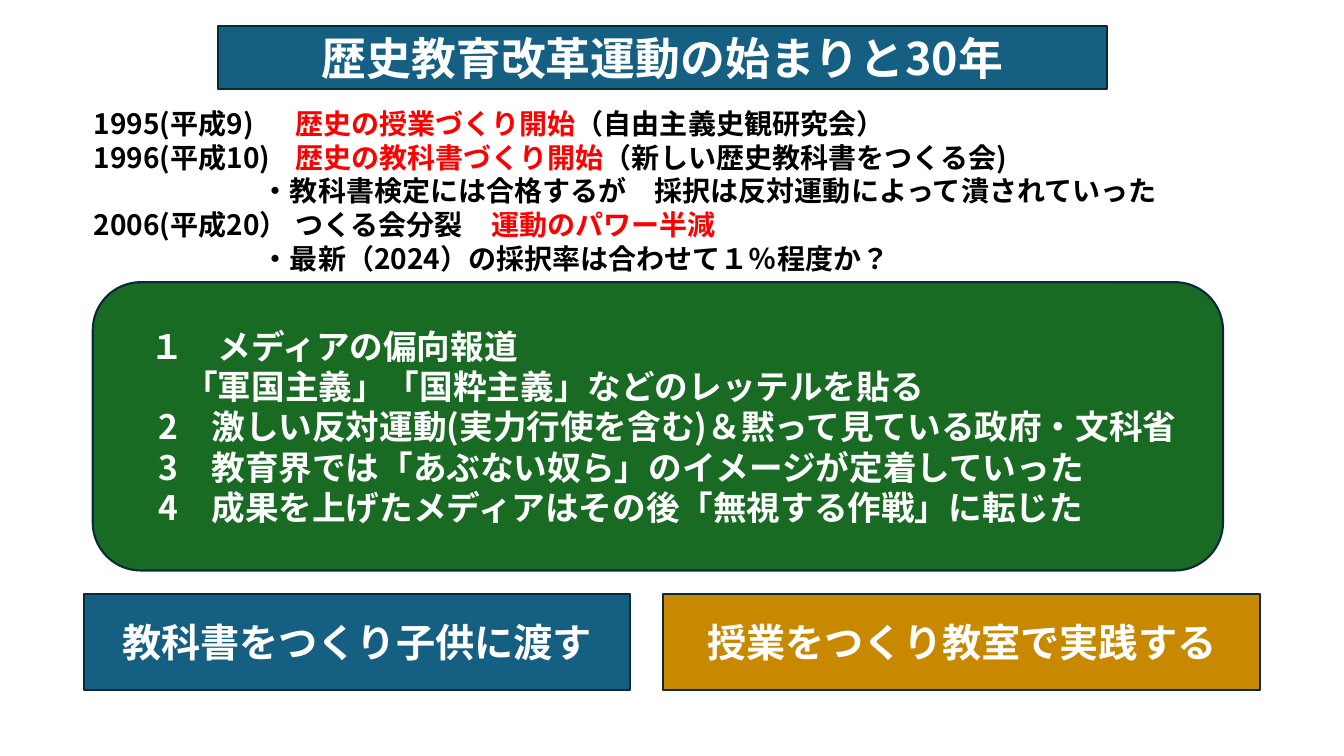
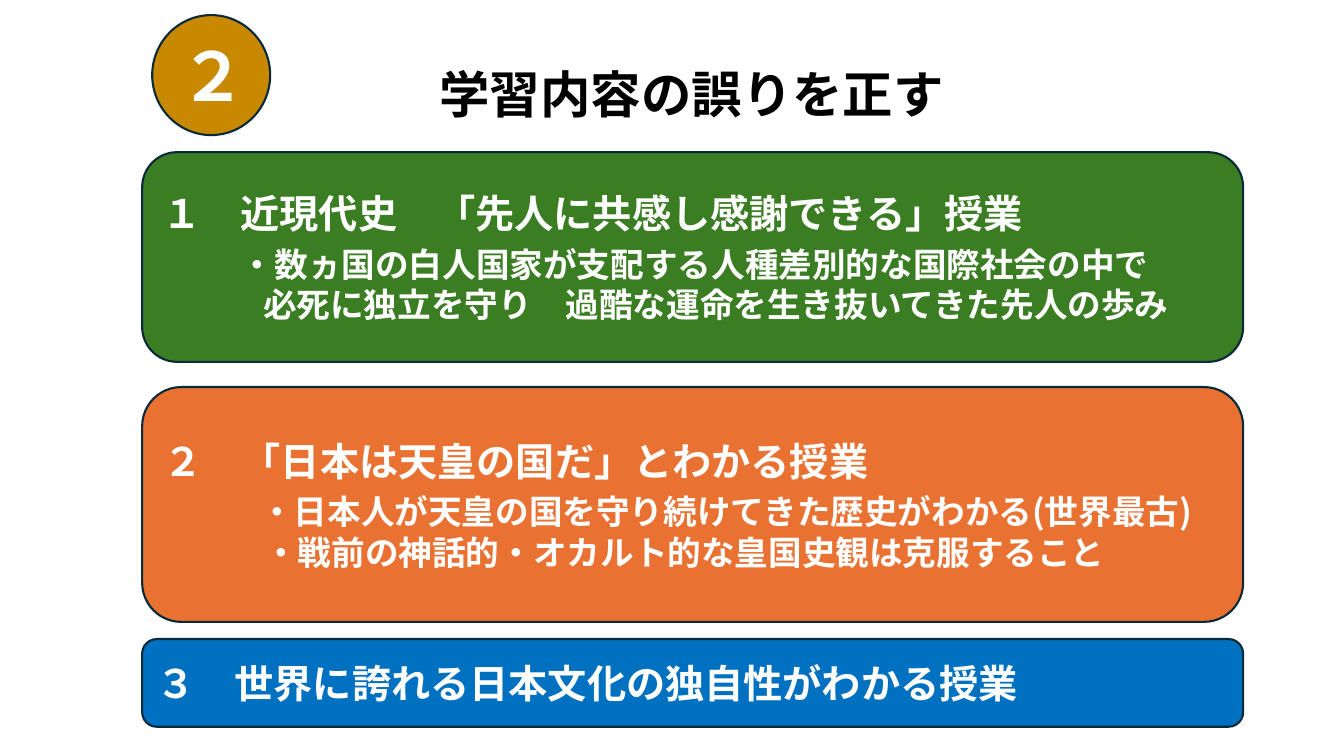
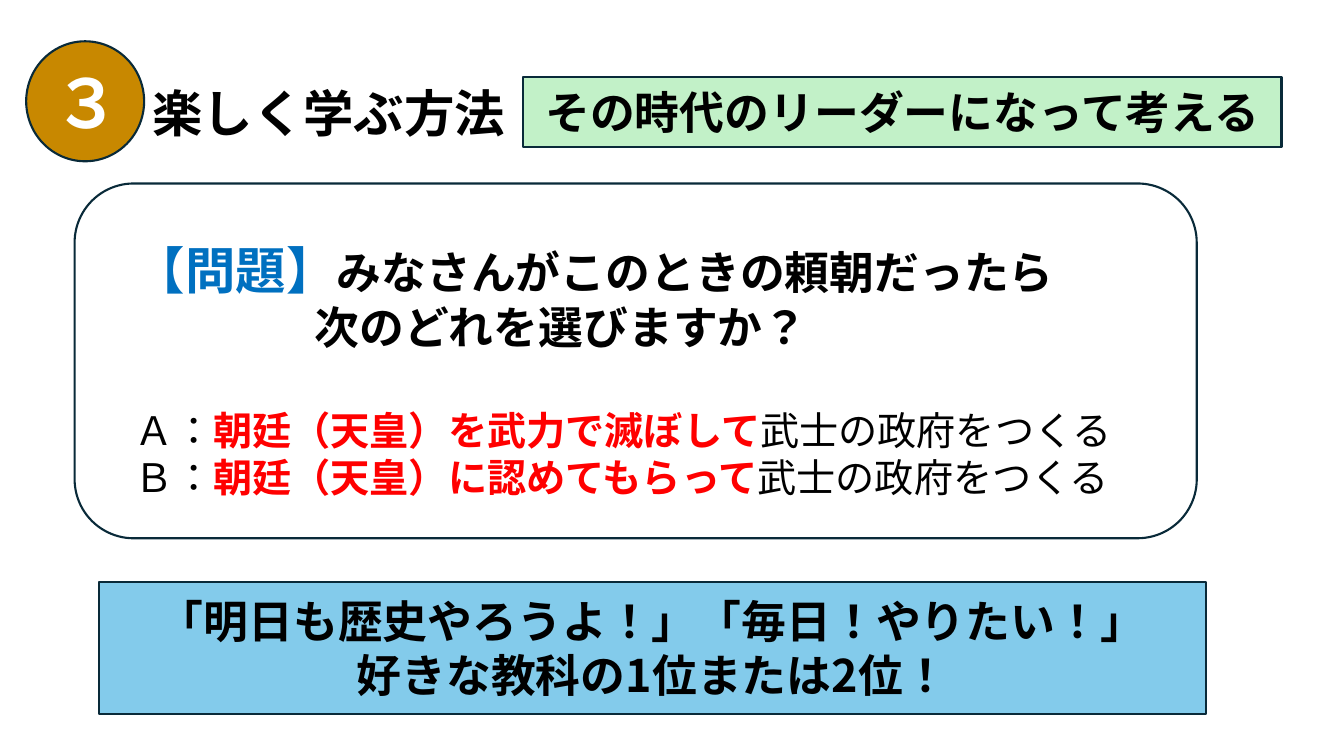
from lxml.etree import SubElement
from pptx import Presentation
from pptx.dml.color import RGBColor
from pptx.enum.lang import MSO_LANGUAGE_ID as Language
from pptx.enum.shapes import MSO_SHAPE as Preset
from pptx.enum.text import MSO_ANCHOR as Anchor, MSO_AUTO_SIZE as AutoSize, PP_ALIGN as Align
from pptx.oxml.ns import qn
from pptx.util import Inches, Pt

FONT = "Noto Sans CJK JP"
BLACK, WHITE, RED = "000000", "FFFFFF", "FF0000"
OUTLINE, TEAL, GOLD, BLUE = "092A39", "156082", "C88800", "0070C0"
LEAF, FOREST, ORANGE = "3B7D23", "196B24", "E97132"
MINT, SKY = "C2F1C8", "83CBEB"
BASE = {"size": 28, "bold": True, "color": WHITE}


def rgb(value):
    """Turn a hex string into a colour."""
    return RGBColor.from_string(value)


def set_all(target, values):
    """Set every attribute named in a dict."""
    for name, value in values.items():
        setattr(target, name, value)


def line(*spans, indent=0, tab=None, before=0):
    """Describe a paragraph; each span is text or a (text, style) pair."""
    pairs = [(span, {}) if isinstance(span, str) else span for span in spans]
    return {"spans": pairs, "indent": indent, "tab": tab, "before": before}


def add_span(para, text, style):
    """Add one formatted run to a paragraph."""
    span = para.add_run()
    span.text = text
    set_all(span.font, {"size": Pt(style["size"]), "bold": style["bold"],
                        "name": FONT, "language_id": Language.JAPANESE})
    span.font.color.rgb = rgb(style["color"])
    SubElement(span.font._element, qn("a:ea"), typeface=FONT)


def write(shape, lines, anchor=Anchor.MIDDLE, align=Align.LEFT, **style):
    """Fill a shape with paragraphs in one base style."""
    frame = shape.text_frame
    set_all(frame, {"word_wrap": True, "auto_size": AutoSize.NONE, "vertical_anchor": anchor})
    for index, item in enumerate(lines):
        para = frame.paragraphs[0] if index == 0 else frame.add_paragraph()
        set_all(para, {"alignment": align, "space_before": Pt(item["before"])})
        props = para._p.get_or_add_pPr()
        props.set("marL", "0")
        props.set("indent", str(Inches(item["indent"])))
        if item["tab"]:
            stops = SubElement(props, qn("a:tabLst"))
            SubElement(stops, qn("a:tab"), pos=str(Inches(item["tab"])), algn="l")
        for text, change in item["spans"]:
            add_span(para, text, {**BASE, **style, **change})


def paint(shape, fill):
    """Give a shape its fill and the shared outline."""
    if fill:
        shape.fill.solid()
        shape.fill.fore_color.rgb = rgb(fill)
    else:
        shape.fill.background()
    shape.line.color.rgb = rgb(OUTLINE)
    shape.line.width = Pt(1.5)


def add_panel(page, box, fill, lines=(), kind=Preset.RECTANGLE, **style):
    """Place an outlined preset shape with its text."""
    shape = page.shapes.add_shape(kind, *map(Inches, box))
    shape.shadow.inherit = False
    paint(shape, fill)
    write(shape, lines, **style)


def add_card(page, box, fill, lines=(), **style):
    """Place a rounded panel."""
    add_panel(page, box, fill, lines, kind=Preset.ROUNDED_RECTANGLE, **style)


def add_text(page, box, lines, **style):
    """Place a plain text box."""
    shape = page.shapes.add_textbox(*map(Inches, box))
    write(shape, lines, anchor=Anchor.TOP, color=BLACK, **style)


def add_badge(page, left, top, number):
    """Place a round section number."""
    add_panel(page, (left, top, 1.17, 1.19), GOLD, [line(number)],
              kind=Preset.FLOWCHART_CONNECTOR, align=Align.CENTER, size=48)


def add_page(deck, title, box, fill=None, **style):
    """Start a title-only slide and format its title."""
    page = deck.slides.add_slide(deck.slide_layouts[5])
    shape = page.shapes.title
    set_all(shape, dict(zip(("left", "top", "width", "height"), map(Inches, box))))
    if fill:
        paint(shape, fill)
    write(shape, [line(title)], **{"size": 36, "color": BLACK, **style})
    return page


def build_history(deck):
    """Build the slide on the start of the movement."""
    page = add_page(deck, "歴史教育改革運動の始まりと30年", (2.16, 0.26, 8.82, 0.62),
                    fill=TEAL, align=Align.CENTER, size=32, color=WHITE)
    red = {"color": RED}
    add_text(page, (0.83, 1.01, 11.94, 1.79), [
        line("1995(平成9)\t", ("歴史の授業づくり開始", red), "（自由主義史観研究会）", tab=2.2),
        line("1996(平成10)\t", ("歴史の教科書づくり開始", red),
             "（新しい歴史教科書をつくる会)", tab=2.23),
        line("・教科書検定には合格するが　採択は反対運動によって潰されていった", indent=1.67),
        line("2006(平成20）\tつくる会分裂　", ("運動のパワー半減", red), tab=2.2),
        line("・最新（2024）の採択率は合わせて１％程度か？", indent=1.67),
    ], size=20)
    add_card(page, (0.92, 2.8, 11.21, 2.86), FOREST, [
        line("１\tメディアの偏向報道", indent=0.33, tab=0.79),
        line("「軍国主義」「国粋主義」などのレッテルを貼る", indent=0.67),
        line("2　激しい反対運動(実力行使を含む)＆黙って見ている政府・文科省", indent=0.41),
        line("3　教育界では「あぶない奴ら」のイメージが定着していった", indent=0.41),
        line("4　成果を上げたメディアはその後「無視する作戦」に転じた", indent=0.41),
    ], size=24)
    for left, width, fill, text in ((0.83, 5.42, TEAL, "教科書をつくり子供に渡す"),
                                    (6.58, 5.92, GOLD, "授業をつくり教室で実践する")):
        add_panel(page, (left, 5.89, width, 0.96), fill, [line(text)], align=Align.CENTER)


def build_content(deck):
    """Build the slide on correcting what is taught."""
    page = add_page(deck, "学習内容の誤りを正す", (1.51, 0.57, 10.7, 0.71), align=Align.CENTER)
    add_badge(page, 1.51, 0.15, "２")
    small = {"size": 24}
    cards = (
        (1.51, 2.08, LEAF, [
            line("１　近現代史　「先人に共感し感謝できる」授業"),
            line(("・数ヵ国の白人国家が支配する人種差別的な国際社会の中で", small),
                 indent=0.78, before=5),
            line(("必死に独立を守り　過酷な運命を生き抜いてきた先人の歩み", small), indent=1),
        ]),
        (3.84, 2.33, ORANGE, [
            line("２　「日本は天皇の国だ」とわかる授業"),
            line(("・日本人が天皇の国を守り続けてきた歴史がわかる(世界最古)", small),
                 indent=0.96, before=5),
            line(("・戦前の神話的・オカルト的な皇国史観は克服すること", small), indent=1),
        ]),
        (6.34, 0.87, BLUE, [line("３　世界に誇れる日本文化の独自性がわかる授業")]),
    )
    for top, height, fill, lines in cards:
        add_card(page, (1.41, top, 10.92, height), fill, lines)


def build_method(deck):
    """Build the slide on enjoyable ways to learn."""
    page = add_page(deck, "楽しく学ぶ方法", (1.41, 0.76, 3.78, 0.71))
    add_badge(page, 0.26, 0.41, "３")
    add_card(page, (0.74, 1.82, 11.13, 3.52), None)
    plain, red = {"size": 28, "bold": False}, {"size": 28, "color": RED}
    choices = (("Ａ：", "朝廷（天皇）を武力で滅ぼして", 38),
               ("Ｂ：", "朝廷（天皇）に認めてもらって", 0))
    add_text(page, (1.24, 2.32, 10.47, 2.73), [
        line(("【問題】", {"size": 36, "color": BLUE}), "みなさんがこのときの頼朝だったら"),
        line("次のどれを選びますか？", indent=1.78),
        *(line((label, plain), (choice, red), ("武士の政府をつくる", plain), before=gap)
          for label, choice, gap in choices),
    ], size=32)
    dark = {"align": Align.CENTER, "size": 32, "color": BLACK}
    add_panel(page, (5.19, 0.76, 7.52, 0.7), MINT,
              [line("その時代のリーダーになって考える")], **dark)
    add_panel(page, (0.98, 5.77, 10.98, 1.31), SKY,
              [line("「明日も歴史やろうよ！」「毎日！やりたい！」"),
               line("好きな教科の1位または2位！")], **dark)


def main():
    """Build and save the deck."""
    deck = Presentation()
    set_all(deck, {"slide_width": Inches(13.33), "slide_height": Inches(7.5)})
    for build in (build_history, build_content, build_method):
        build(deck)
    deck.save("out.pptx")


if __name__ == "__main__":
    main()
